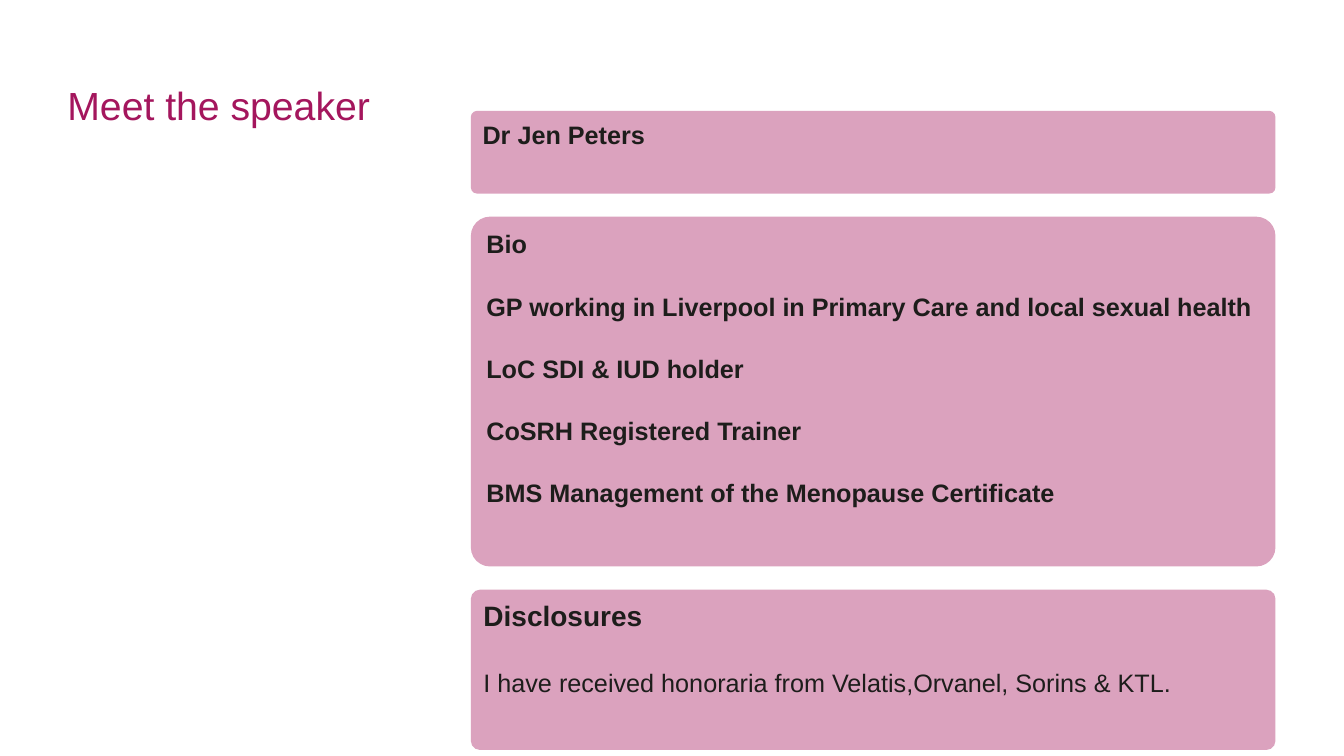
from dataclasses import dataclass

from lxml import etree
from pptx import Presentation
from pptx.dml.color import RGBColor
from pptx.enum import shapes, text
from pptx.oxml import ns
from pptx.util import Inches, Pt


@dataclass(frozen=True)
class Theme:
    font: str = "Arial"
    title_color: str = "A4165D"
    panel_color: str = "A6175D"
    panel_alpha: int = 40000
    ink: str = "1D1D1B"
    title_size: float = 28
    heading_size: float = 20
    body_size: float = 18
    line_spacing: float = 1.05


THEME = Theme()


@dataclass(frozen=True)
class Line:
    text: str
    size: float = THEME.body_size
    bold: bool = True
    before: float = 0


@dataclass(frozen=True)
class Panel:
    height: float
    radius: float
    lines: tuple[Line, ...]


BIO = (
    "GP working in Liverpool in Primary Care and local sexual health",
    "LoC SDI & IUD holder",
    "CoSRH Registered Trainer",
    "BMS Management of the Menopause Certificate",
)
PANELS = (
    Panel(0.82, 0.06, (Line("Dr Jen Peters"),)),
    Panel(3.47, 0.19, (Line("Bio"), *(Line(entry, before=21.7) for entry in BIO))),
    Panel(1.59, 0.09, (
        Line("Disclosures", size=THEME.heading_size),
        Line("I have received honoraria from Velatis,Orvanel, Sorins & KTL.",
             bold=False, before=24),
    )),
)
PANEL_LEFT, PANEL_TOP, PANEL_WIDTH, PANEL_GAP = 4.67, 1.1, 7.98, 0.23


def write_paragraph(para, content: str, *, size: float, color: str,
                    bold: bool = False, before: float = 0,
                    spacing: float = THEME.line_spacing) -> None:
    para.alignment = text.PP_ALIGN.LEFT
    para.line_spacing = spacing
    if before:
        para.space_before = Pt(before)
    span = para.add_run()
    span.text = content
    span.font.name = THEME.font
    span.font.size = Pt(size)
    span.font.bold = bold
    span.font.color.rgb = RGBColor.from_string(color)


def draw_title(page, content: str) -> None:
    box = page.shapes.add_textbox(Inches(0.57), Inches(0.62), Inches(12.06), Inches(0.4))
    box.text_frame.word_wrap = True
    write_paragraph(box.text_frame.paragraphs[0], content, size=THEME.title_size,
                    color=THEME.title_color, spacing=1.3)


def draw_panel(page, panel: Panel, top: float) -> None:
    box = page.shapes.add_shape(
        shapes.MSO_SHAPE.ROUNDED_RECTANGLE, Inches(PANEL_LEFT), Inches(top),
        Inches(PANEL_WIDTH), Inches(panel.height))
    box.adjustments[0] = panel.radius / panel.height
    box.shadow.inherit = False
    box.line.fill.background()
    box.fill.solid()
    box.fill.fore_color.rgb = RGBColor.from_string(THEME.panel_color)
    color = box.fill._xPr.find(".//" + ns.qn("a:srgbClr"))
    etree.SubElement(color, ns.qn("a:alpha"), val=str(THEME.panel_alpha))
    frame = box.text_frame
    frame.word_wrap = True
    frame.vertical_anchor = text.MSO_ANCHOR.TOP
    for index, line in enumerate(panel.lines):
        para = frame.add_paragraph() if index else frame.paragraphs[0]
        write_paragraph(para, line.text, size=line.size, color=THEME.ink,
                        bold=line.bold, before=line.before)


def main() -> None:
    deck = Presentation()
    deck.slide_width, deck.slide_height = Inches(13.33), Inches(7.5)
    page = deck.slides.add_slide(deck.slide_layouts[6])
    top = PANEL_TOP
    for panel in PANELS:
        draw_panel(page, panel, top)
        top += panel.height + PANEL_GAP
    draw_title(page, "Meet the speaker")
    deck.save("out.pptx")


if __name__ == "__main__":
    main()
